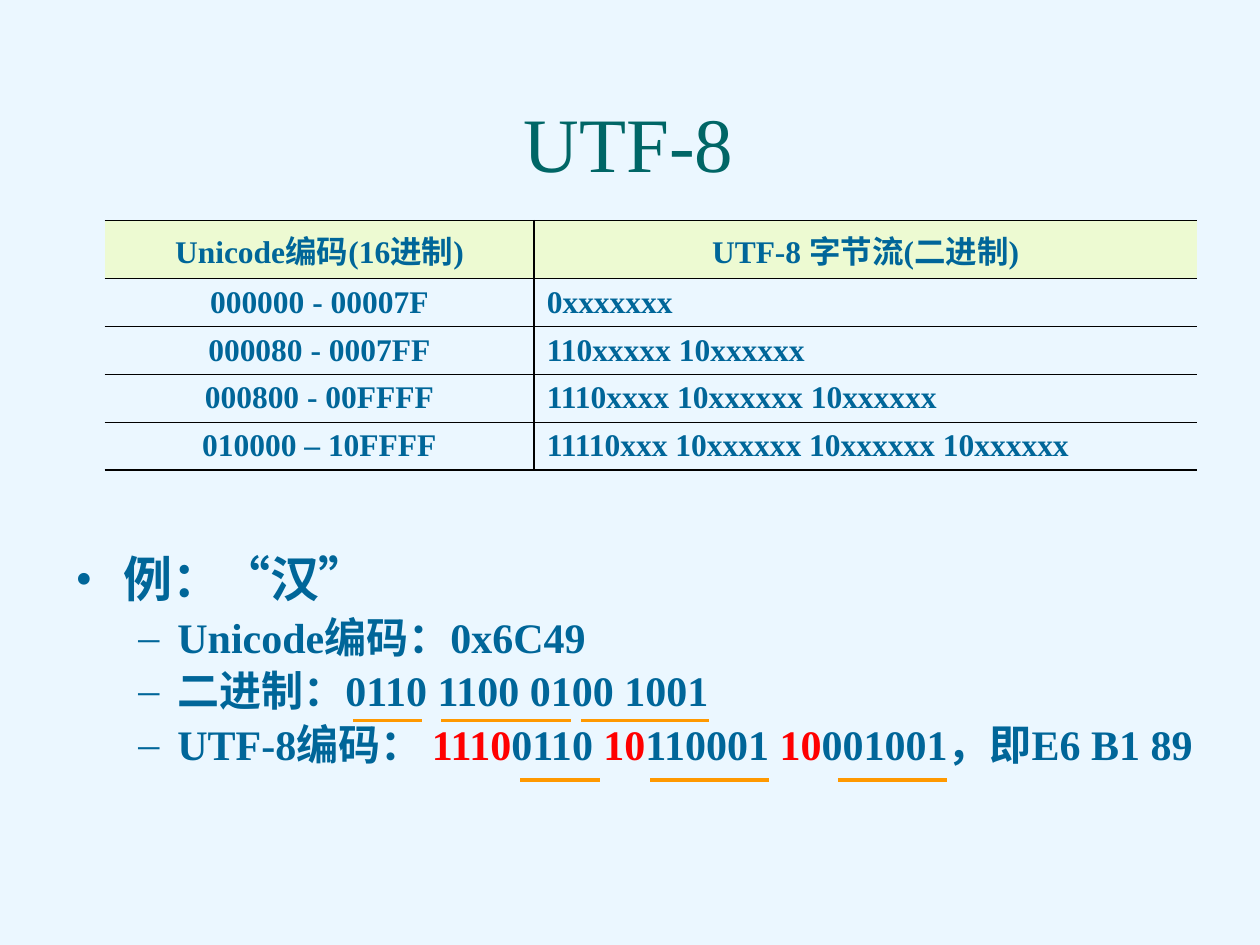
from pptx import Presentation
from pptx.dml.color import RGBColor
from pptx.enum.shapes import MSO_CONNECTOR
from pptx.enum.text import MSO_ANCHOR, PP_ALIGN
from pptx.oxml import parse_xml
from pptx.oxml.ns import nsdecls
from pptx.util import Inches, Pt

BACKGROUND = RGBColor(0xEB, 0xF7, 0xFF)
TEAL = RGBColor(0x00, 0x66, 0x66)
BLUE = RGBColor(0x00, 0x66, 0x99)
RED = RGBColor(0xFF, 0x00, 0x00)
ORANGE = RGBColor(0xFF, 0x99, 0x00)
HEADER_FILL = RGBColor(0xED, 0xFA, 0xD2)


def add_text(p, text, size=24, color=BLUE, bold=True, align=PP_ALIGN.LEFT):
    p.alignment = align
    r = p.add_run()
    r.text = text
    r.font.name = "Times New Roman"
    r.font.size = Pt(size)
    r.font.bold = bold
    r.font.color.rgb = color


def make_border(side, visible):
    fill = '<a:solidFill><a:srgbClr val="000000"/></a:solidFill>' if visible else "<a:noFill/>"
    return parse_xml(f'<a:ln{side} {nsdecls("a")} w="12700">{fill}</a:ln{side}>')


prs = Presentation()
prs.slide_width, prs.slide_height = Inches(10), Inches(7.5)
s = prs.slides.add_slide(prs.slide_layouts[5])
s.background.fill.solid()
s.background.fill.fore_color.rgb = BACKGROUND

title = s.shapes.title
title.left, title.top = Inches(0.48), Inches(0.11)
title.width, title.height = Inches(9.02), Inches(1.44)
tf = title.text_frame
tf.vertical_anchor = MSO_ANCHOR.BOTTOM
tf.paragraphs[0].line_spacing = 0.9
add_text(tf.paragraphs[0], "UTF-8", size=44, color=TEAL, bold=False, align=PP_ALIGN.CENTER)

rows = [
    ("Unicode编码(16进制)", "UTF-8 字节流(二进制)"),
    ("000000 - 00007F", "0xxxxxxx"),
    ("000080 - 0007FF", "110xxxxx 10xxxxxx"),
    ("000800 - 00FFFF", "1110xxxx 10xxxxxx 10xxxxxx"),
    ("010000 – 10FFFF", "11110xxx 10xxxxxx 10xxxxxx 10xxxxxx"),
]
table = s.shapes.add_table(len(rows), 2, Inches(0.83), Inches(1.75), Inches(8.67), Inches(1.98)).table
table.columns[0].width, table.columns[1].width = Inches(3.41), Inches(5.26)
for i, row in enumerate(rows):
    table.rows[i].height = Inches(0.46 if i == 0 else 0.38)
    for j, text in enumerate(row):
        cell = table.cell(i, j)
        if i == 0:
            cell.fill.solid()
            cell.fill.fore_color.rgb = HEADER_FILL
        else:
            cell.fill.background()
        centered = i == 0 or j == 0
        add_text(cell.text_frame.paragraphs[0], text, size=18,
                 align=PP_ALIGN.CENTER if centered else PP_ALIGN.LEFT)
        tcPr = cell._tc.get_or_add_tcPr()
        borders = [("L", j == 1), ("R", j == 0), ("T", True), ("B", True)]
        for k, (side, visible) in enumerate(borders):
            tcPr.insert(k, make_border(side, visible))

example = [
    (0, [("例：“汉”", BLUE)]),
    (1, [("Unicode编码：0x6C49", BLUE)]),
    (1, [("二进制：0110 1100 0100 1001", BLUE)]),
    (1, [("UTF-8编码： ", BLUE), ("1110", RED), ("0110 ", BLUE), ("10", RED),
         ("110001 ", BLUE), ("10", RED), ("001001，即E6 B1 89", BLUE)]),
]
level_formats = [(28, "•", 0.38, 0.38), (24, "–", 0.81, 0.31)]
tf = s.shapes.add_textbox(Inches(0.5), Inches(4.36), Inches(9.5), Inches(2.26)).text_frame
tf.word_wrap = True
for i, (level, parts) in enumerate(example):
    size, bullet, margin, hanging = level_formats[level]
    p = tf.paragraphs[0] if i == 0 else tf.add_paragraph()
    p.level = level
    p.line_spacing = 0.9
    p.space_before = Pt(size * 0.2)
    for text, color in parts:
        add_text(p, text, size=size, color=color)
    pPr = p._p.get_or_add_pPr()
    pPr.set("marL", str(Inches(margin)))
    pPr.set("indent", str(-Inches(hanging)))
    pPr.append(parse_xml(f'<a:buFont {nsdecls("a")} typeface="Times New Roman"/>'))
    pPr.append(parse_xml(f'<a:buChar {nsdecls("a")} char="{bullet}"/>'))
    p._p.append(parse_xml(f'<a:endParaRPr {nsdecls("a")} sz="{size * 100}"/>'))

underlines = [
    (5.72, [(2.8, 3.35), (3.5, 4.53), (4.61, 5.63)]),
    (6.19, [(4.13, 4.76), (5.16, 6.1), (6.65, 7.52)]),
]
for y, spans in underlines:
    for x1, x2 in spans:
        line = s.shapes.add_connector(MSO_CONNECTOR.STRAIGHT, Inches(x1), Inches(y), Inches(x2), Inches(y))
        line.line.color.rgb = ORANGE
        line.line.width = Pt(2)
        line._element.spPr.append(parse_xml(f'<a:effectLst {nsdecls("a")}/>'))

prs.save("out.pptx")
